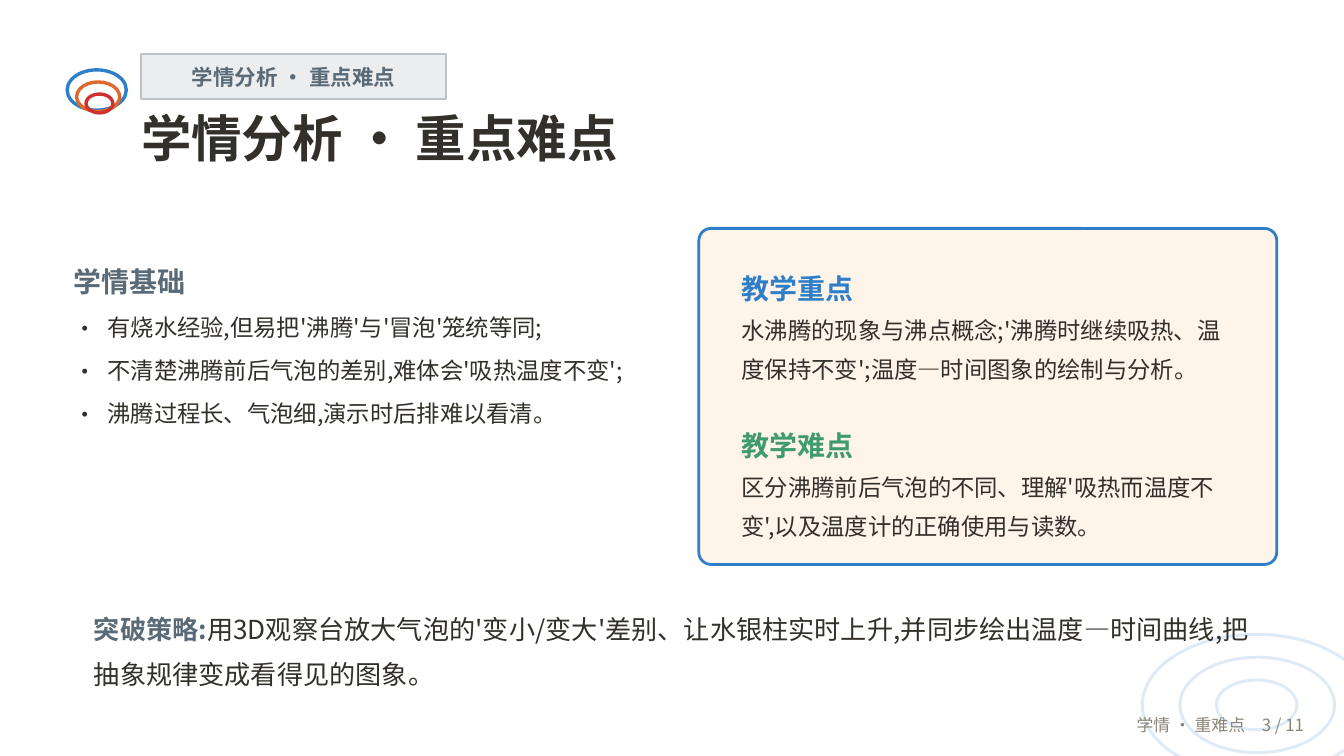
from dataclasses import dataclass
from typing import Optional

from lxml.etree import SubElement
from pptx import Presentation
from pptx.dml.color import RGBColor
from pptx.enum.shapes import MSO_SHAPE
from pptx.enum.text import MSO_ANCHOR, PP_ALIGN
from pptx.oxml.ns import qn
from pptx.util import Inches, Pt

FONT = "Noto Sans CJK SC"
COLORS = {
    "white": "FFFFFF", "ink": "33302B", "slate": "5A6A76", "muted": "8A8478",
    "blue": "2F7FC8", "orange": "E0682C", "red": "CF3030", "green": "3F9B6E",
    "ripple": "DEEBF6", "tag": "EBEDEF", "tag_edge": "BDC3C8", "cream": "FFF4EA",
}


@dataclass
class Box:
    left: float
    top: float
    width: float
    height: float


@dataclass
class Ring:
    box: Box
    color: str
    weight: float


@dataclass
class Span:
    text: str
    size: float
    color: str = "ink"
    bold: bool = False


@dataclass
class Line:
    spans: list[Span]
    bullet: bool = False
    before: float = 0


RINGS = [
    Ring(Box(8.5, 4.72, 1.7, 1.05), "ripple", 1.6),
    Ring(Box(8.78, 4.89, 1.15, 0.71), "ripple", 1.6),
    Ring(Box(9.05, 5.06, 0.6, 0.37), "ripple", 1.6),
    Ring(Box(0.5, 0.52, 0.44, 0.3), "blue", 1.8),
    Ring(Box(0.57, 0.61, 0.32, 0.22), "orange", 1.8),
    Ring(Box(0.64, 0.7, 0.2, 0.14), "red", 1.8),
]
TOPIC = "学情分析 · 重点难点"
BASICS = [
    "有烧水经验,但易把'沸腾'与'冒泡'笼统等同;",
    "不清楚沸腾前后气泡的差别,难体会'吸热温度不变';",
    "沸腾过程长、气泡细,演示时后排难以看清。",
]
KEY_POINT = "水沸腾的现象与沸点概念;'沸腾时继续吸热、温度保持不变';温度—时间图象的绘制与分析。"
DIFFICULTY = "区分沸腾前后气泡的不同、理解'吸热而温度不变',以及温度计的正确使用与读数。"
STRATEGY = "用3D观察台放大气泡的'变小/变大'差别、让水银柱实时上升,并同步绘出温度—时间曲线,把抽象规律变成看得见的图象。"


def rgb(name: str) -> RGBColor:
    """Return the named colour."""
    return RGBColor.from_string(COLORS[name])


def place(box: Box) -> list[Inches]:
    """Return the box as four lengths."""
    return [Inches(v) for v in (box.left, box.top, box.width, box.height)]


def add_outline(slide, kind: MSO_SHAPE, box: Box, edge: str, weight: float,
                fill: Optional[str] = None):
    """Add a preset shape with a line and an optional fill."""
    shape = slide.shapes.add_shape(kind, *place(box))
    shape.shadow.inherit = False
    shape.line.color.rgb = rgb(edge)
    shape.line.width = Pt(weight)
    if fill:
        shape.fill.solid()
        shape.fill.fore_color.rgb = rgb(fill)
    else:
        shape.fill.background()
    return shape


def add_bullet(paragraph) -> None:
    """Give the paragraph a hanging dot."""
    properties = paragraph._p.get_or_add_pPr()
    properties.set("marL", str(Inches(0.25)))
    properties.set("indent", str(-Inches(0.25)))
    SubElement(properties, qn("a:buFont"), typeface=FONT)
    SubElement(properties, qn("a:buChar"), char="·")


def write(shape, lines: list[Line], *, spacing: Optional[float] = None,
          align: PP_ALIGN = PP_ALIGN.LEFT, anchor: MSO_ANCHOR = MSO_ANCHOR.TOP,
          padded: bool = False) -> None:
    """Write formatted lines into a shape."""
    frame = shape.text_frame
    frame.word_wrap = True
    frame.vertical_anchor = anchor
    if not padded:
        frame.margin_left = frame.margin_right = 0
        frame.margin_top = frame.margin_bottom = 0
    for index, line in enumerate(lines):
        paragraph = frame.add_paragraph() if index else frame.paragraphs[0]
        paragraph.alignment = align
        if spacing:
            paragraph.line_spacing = Pt(spacing)
        if line.before:
            paragraph.space_before = Pt(line.before)
        if line.bullet:
            add_bullet(paragraph)
        for span in line.spans:
            run = paragraph.add_run()
            run.text = span.text
            run.font.size = Pt(span.size)
            run.font.bold = span.bold
            run.font.color.rgb = rgb(span.color)
            run.font.name = FONT
            SubElement(run._r.get_or_add_rPr(), qn("a:ea"), typeface=FONT)


def add_text(slide, box: Box, lines: list[Line], **layout) -> None:
    """Add a text box holding the lines."""
    write(slide.shapes.add_textbox(*place(box)), lines, **layout)


def heading(text: str, color: str, before: float = 0) -> Line:
    """Return a section heading."""
    return Line([Span(text, 15, color, True)], before=before)


def body(text: str, bullet: bool = False) -> Line:
    """Return a line of body text."""
    return Line([Span(text, 12.5)], bullet)


def main() -> None:
    """Build the slide and save it."""
    deck = Presentation()
    deck.slide_width = Inches(10)
    deck.slide_height = Inches(10 * 9 / 16)
    slide = deck.slides.add_slide(deck.slide_layouts[6])
    slide.background.fill.solid()
    slide.background.fill.fore_color.rgb = rgb("white")

    for ring in RINGS:
        add_outline(slide, MSO_SHAPE.OVAL, ring.box, ring.color, ring.weight)

    tag = add_outline(slide, MSO_SHAPE.RECTANGLE, Box(1.05, 0.4, 2.27, 0.34),
                      "tag_edge", 1, "tag")
    write(tag, [Line([Span(TOPIC, 11.5, "slate", True)])],
          align=PP_ALIGN.CENTER, anchor=MSO_ANCHOR.MIDDLE)
    add_text(slide, Box(1.05, 0.8, 8.4, 0.55),
             [Line([Span(TOPIC, 27, "ink", True)])])

    add_text(slide, Box(0.55, 1.9, 4.5, 1.8),
             [heading("学情基础", "slate")] + [body(item, True) for item in BASICS],
             spacing=23)

    card = add_outline(slide, MSO_SHAPE.ROUNDED_RECTANGLE, Box(5.2, 1.7, 4.3, 2.5),
                       "blue", 1.5, "cream")
    card.adjustments[0] = 0.036
    add_text(slide, Box(5.42, 1.9, 3.92, 2.2),
             [heading("教学重点", "blue"), body(KEY_POINT),
              heading("教学难点", "green", before=21), body(DIFFICULTY)],
             spacing=21, anchor=MSO_ANCHOR.MIDDLE, padded=True)

    add_text(slide, Box(0.6, 4.45, 8.85, 0.7),
             [Line([Span("突破策略:", 14, "slate", True), Span(STRATEGY, 14)])],
             spacing=24, anchor=MSO_ANCHOR.MIDDLE, padded=True)
    add_text(slide, Box(8, 5.24, 1.8, 0.3),
             [Line([Span("学情 · 重难点　3 / 11", 9, "muted")])],
             align=PP_ALIGN.RIGHT, anchor=MSO_ANCHOR.MIDDLE, padded=True)
    deck.save("out.pptx")


if __name__ == "__main__":
    main()
